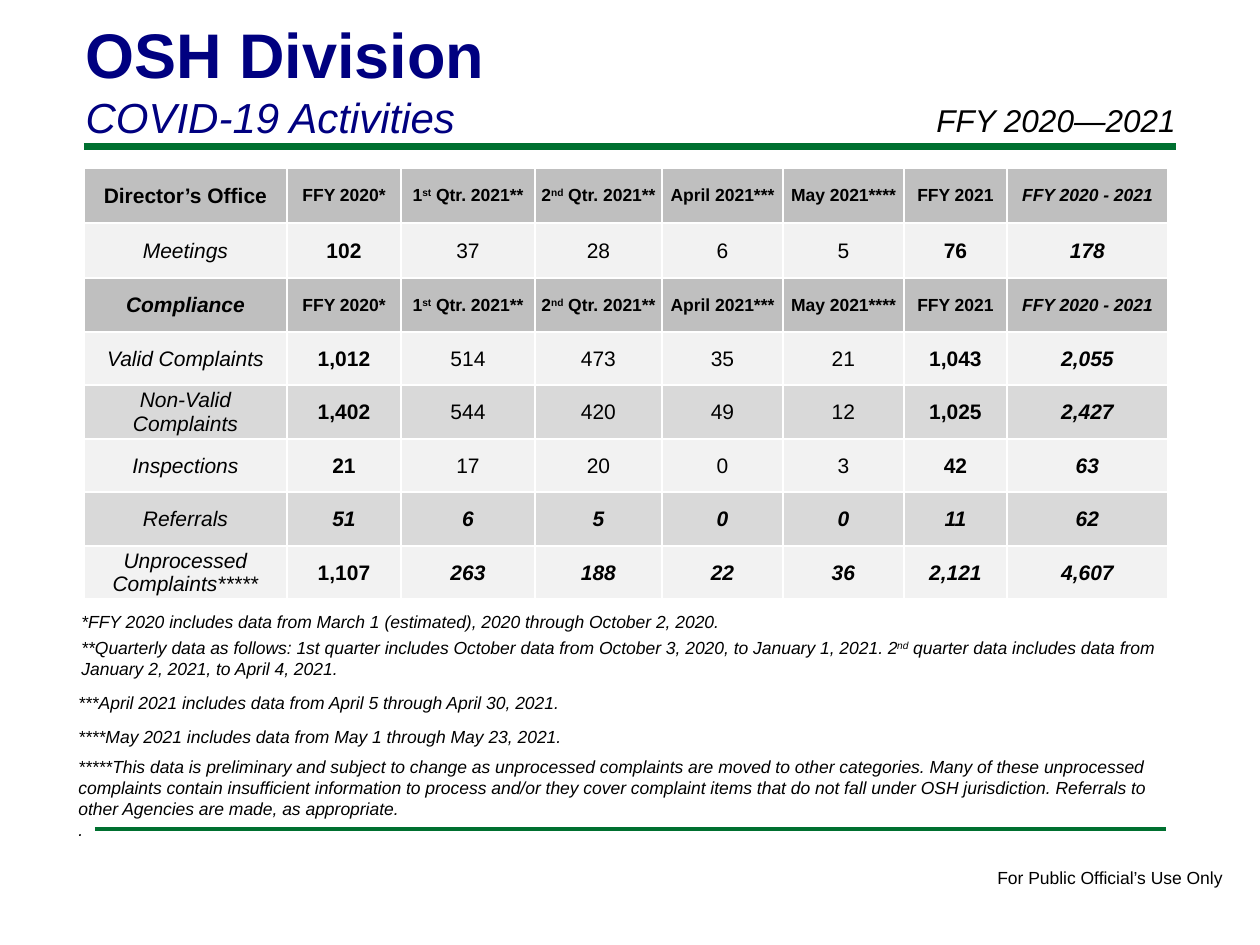
from pptx import Presentation
from pptx.dml.color import RGBColor
from pptx.enum.shapes import MSO_CONNECTOR
from pptx.enum.text import MSO_ANCHOR, MSO_AUTO_SIZE, PP_ALIGN
from pptx.oxml.ns import qn
from pptx.util import Emu, Pt
from lxml.etree import SubElement

# Content: text between ^ marks is superscript
TITLE = [("OSH Division", 36, True, False),
         ("COVID-19 Activities", 24, False, True)]
HEADS = ["FFY 2020*", "1^st^ Qtr. 2021**", "2^nd^ Qtr. 2021**", "April 2021***",
         "May 2021****", "FFY 2021", "FFY 2020 - 2021"]
ROWS = [
    ["Director’s Office"] + HEADS,
    ["Meetings", "102", "37", "28", "6", "5", "76", "178"],
    ["Compliance"] + HEADS,
    ["Valid Complaints", "1,012", "514", "473", "35", "21", "1,043", "2,055"],
    ["Non-Valid Complaints", "1,402", "544", "420", "49", "12", "1,025", "2,427"],
    ["Inspections", "21", "17", "20", "0", "3", "42", "63"],
    ["Referrals", "51", "6", "5", "0", "0", "11", "62"],
    ["Unprocessed Complaints*****", "1,107", "263", "188", "22", "36", "2,121", "4,607"],
]
WIDTHS = [203, 114, 134, 127, 121, 121, 103, 161]
HEIGHTS = [55, 55, 54, 53, 54, 53, 54, 53]

# Text boxes: left, top, width, height, size, italic, wrap, paragraphs
BOXES = [
    (69, 605, 1100, 34, 10, True, True,
     ["*FFY 2020 includes data from March 1 (estimated), 2020 through October 2, 2020."]),
    (69, 631, 1100, 55, 10, True, True,
     ["**Quarterly data as follows: 1st quarter includes October data from October 3, 2020, "
      "to January 1, 2021. 2^nd^ quarter data includes data from January 2, 2021, "
      "to April 4, 2021."]),
    (66, 686, 1100, 34, 10, True, True,
     ["***April 2021 includes data from April 5 through April 30, 2021."]),
    (66, 720, 1100, 34, 10, True, True,
     ["****May 2021 includes data from May 1 through May 23, 2021."]),
    (66, 750, 1092, 97, 10, True, True,
     ["*****This data is preliminary and subject to change as unprocessed complaints are "
      "moved to other categories. Many of these unprocessed complaints contain insufficient "
      "information to process and/or they cover complaint items that do not fall under OSH "
      "jurisdiction. Referrals to other Agencies are made, as appropriate.", "."]),
    (924, 95, 315, 50, 18, True, True, ["FFY 2020—2021"]),
    (985, 861, 253, 34, 10, False, False, ["For Public Official’s Use Only"]),
]
# Rules: left, right, y, weight
RULES = [(84, 1176, 147, 4), (95, 1166, 829, 2)]


def px(n):
    return Emu(round(n * 914400 / 126))


def tint(code):
    return RGBColor.from_string(code)


def write(para, text, size, bold=False, ital=False, color="000000"):
    for i, part in enumerate(text.split("^")):
        run = para.add_run()
        run.text = part
        font = run.font
        font.name, font.size = "Arial", Pt(size)
        font.bold, font.italic = bold, ital
        font.color.rgb = tint(color)
        if i % 2:
            run._r.get_or_add_rPr().set("baseline", "30000")


def edge(cell):
    props = cell._tc.get_or_add_tcPr()
    for i, side in enumerate(("lnL", "lnR", "lnT", "lnB")):
        line = props.makeelement(qn("a:" + side), {"w": str(Pt(1))})
        fill = SubElement(line, qn("a:solidFill"))
        SubElement(fill, qn("a:srgbClr"), val="FFFFFF")
        props.insert(i, line)


def style(row, col):
    """Size, bold and italic of a table cell."""
    if row in (0, 2):
        return (10 if col else 12), True, col == 7 or (row, col) == (2, 0)
    if col == 0:
        return 12, False, True
    strong = row == 6 or (row == 7 and col > 1)
    return 12, strong or col in (1, 6, 7), strong or col == 7


def shade(row):
    if row in (0, 2):
        return "BFBFBF"
    return "F2F2F2" if row % 2 else "D9D9D9"


deck = Presentation()
deck.slide_width, deck.slide_height = px(1260), px(945)
slide = deck.slides.add_slide(deck.slide_layouts[5])
shapes = slide.shapes

# Green rules
for left, right, y, weight in RULES:
    rule = shapes.add_connector(MSO_CONNECTOR.STRAIGHT, px(left), px(y), px(right), px(y))
    rule.line.color.rgb = tint("007030")
    rule.line.width = Pt(weight)
    SubElement(rule._element.spPr, qn("a:effectLst"))

# Title
head = shapes.title
head.left, head.top, head.width, head.height = px(73), px(8), px(1040), px(140)
frame = head.text_frame
frame.auto_size = MSO_AUTO_SIZE.NONE
frame.vertical_anchor = MSO_ANCHOR.BOTTOM
for i, (text, size, bold, ital) in enumerate(TITLE):
    para = frame.add_paragraph() if i else frame.paragraphs[0]
    para.alignment = PP_ALIGN.LEFT
    write(para, text, size, bold, ital, "000080")

# Table
table = shapes.add_table(len(ROWS), len(WIDTHS), px(84), px(168),
                         px(sum(WIDTHS)), px(sum(HEIGHTS))).table
for col, width in zip(table.columns, WIDTHS):
    col.width = px(width)
for r, (row, height) in enumerate(zip(ROWS, HEIGHTS)):
    table.rows[r].height = px(height)
    for c, text in enumerate(row):
        cell = table.cell(r, c)
        cell.fill.solid()
        cell.fill.fore_color.rgb = tint(shade(r))
        cell.margin_left = cell.margin_right = cell.margin_top = px(1)
        cell.margin_bottom = 0
        cell.vertical_anchor = MSO_ANCHOR.MIDDLE
        edge(cell)
        para = cell.text_frame.paragraphs[0]
        para.alignment = PP_ALIGN.CENTER
        write(para, text, *style(r, c))

# Footnotes, period and footer
for left, top, width, height, size, ital, wrap, lines in BOXES:
    frame = shapes.add_textbox(px(left), px(top), px(width), px(height)).text_frame
    frame.word_wrap = wrap
    for i, text in enumerate(lines):
        para = frame.add_paragraph() if i else frame.paragraphs[0]
        write(para, text, size, ital=ital)

deck.save("out.pptx")
